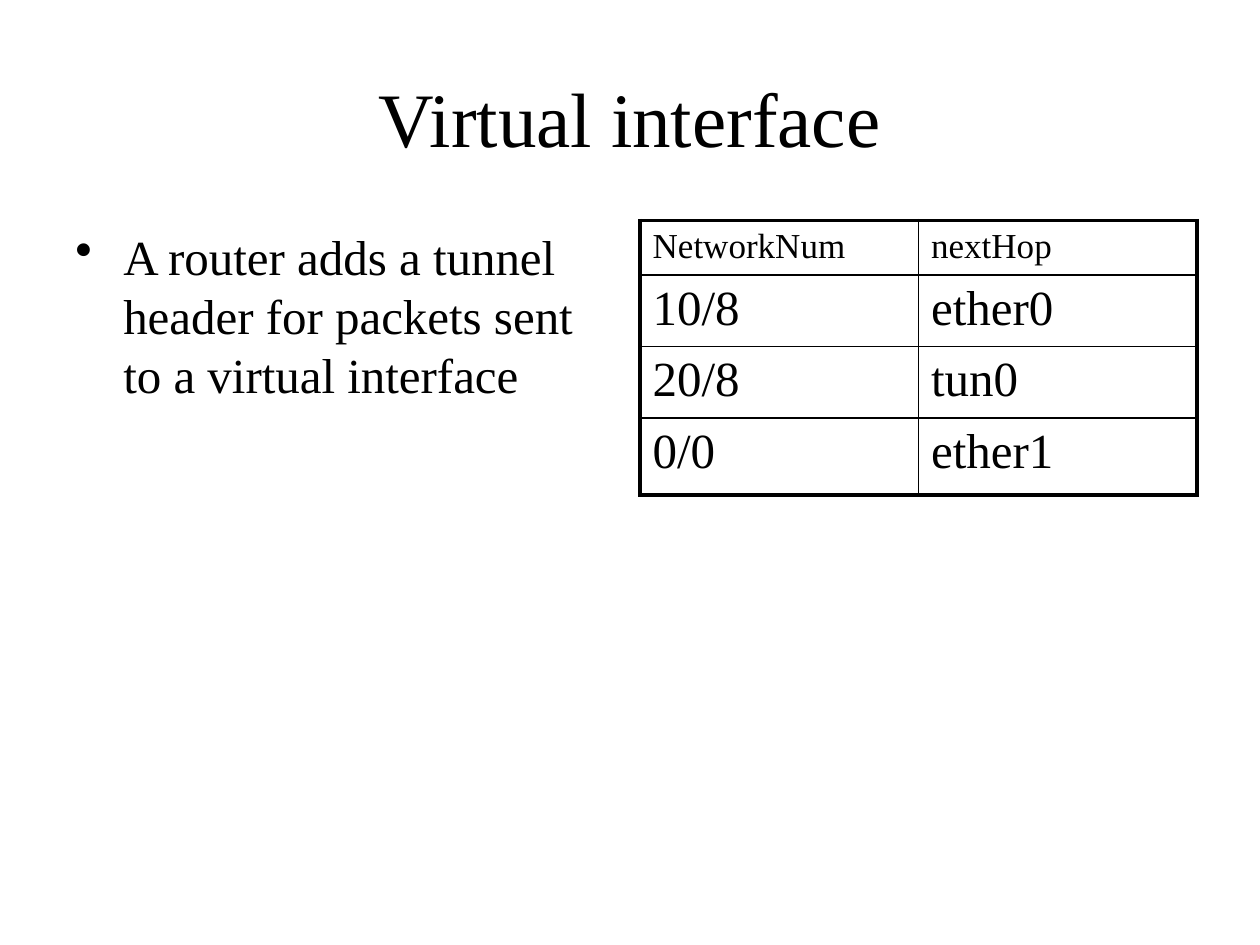
from lxml import etree
from pptx import Presentation
from pptx.dml.color import RGBColor
from pptx.enum.text import MSO_ANCHOR as Anchor, PP_ALIGN as Align
from pptx.oxml.ns import qn
from pptx.util import Inches, Pt

BLACK = RGBColor(0x00, 0x00, 0x00)
FONT = "Times New Roman"
OUTER, INNER = Pt(2.25), Pt(1)


def write(paragraph, text, size, space_before=True):
    """Fill a paragraph; space before is 20 % of the line."""
    paragraph.text = text
    paragraph.font.name = FONT
    paragraph.font.size = Pt(size)
    paragraph.font.color.rgb = BLACK
    if space_before:
        spacing = etree.Element(qn("a:spcBef"))
        etree.SubElement(spacing, qn("a:spcPct"), val="20000")
        paragraph._p.get_or_add_pPr().insert(0, spacing)


def add_border(cell, side, width):
    line = etree.SubElement(cell._tc.get_or_add_tcPr(), qn(f"a:ln{side}"), w=str(width))
    fill = etree.SubElement(line, qn("a:solidFill"))
    etree.SubElement(fill, qn("a:srgbClr"), val=str(BLACK))


prs = Presentation()
prs.slide_width, prs.slide_height = Inches(10), Inches(7.5)
slide = prs.slides.add_slide(prs.slide_layouts[6])

# Title
title = slide.shapes.add_textbox(Inches(0.5), Inches(0.3), Inches(9), Inches(1.25)).text_frame
title.word_wrap = True
title.vertical_anchor = Anchor.MIDDLE
write(title.paragraphs[0], "Virtual interface", 44, space_before=False)
title.paragraphs[0].alignment = Align.CENTER

# Bullet on the left
body = slide.shapes.add_textbox(Inches(0.5), Inches(1.75), Inches(4.42), Inches(4.95)).text_frame
body.word_wrap = True
bullet = body.paragraphs[0]
write(bullet, "A router adds a tunnel header for packets sent to a virtual interface", 28)
bullet_props = bullet._p.get_or_add_pPr()
bullet_props.set("marL", str(Inches(0.38)))
bullet_props.set("indent", str(-Inches(0.38)))
bullet_props.insert(1, etree.Element(qn("a:buChar"), char="•"))

# Routing table on the right
routes = [
    ("NetworkNum", "nextHop"),
    ("10/8", "ether0"),
    ("20/8", "tun0"),
    ("0/0", "ether1"),
]
row_heights = [0.39, 0.38, 0.4, 0.61]
last_row, last_col = len(routes) - 1, len(routes[0]) - 1

routing_frame = slide.shapes.add_table(
    len(routes), len(routes[0]), Inches(5.08), Inches(1.75), Inches(4.42), Inches(2.17)
)
routing = routing_frame.table
routing.first_row = routing.horz_banding = False
for r, (route, height) in enumerate(zip(routes, row_heights)):
    routing.rows[r].height = Inches(height)
    for c, text in enumerate(route):
        cell = routing.cell(r, c)
        write(cell.text_frame.paragraphs[0], text, 20 if r == 0 else 28)
        on_edge = {"L": c == 0, "R": c == last_col, "T": r == 0, "B": r == last_row}
        for side, outer in on_edge.items():
            add_border(cell, side, OUTER if outer else INNER)
        cell.fill.background()
routing_frame.height = Inches(2.17)

prs.save("out.pptx")
